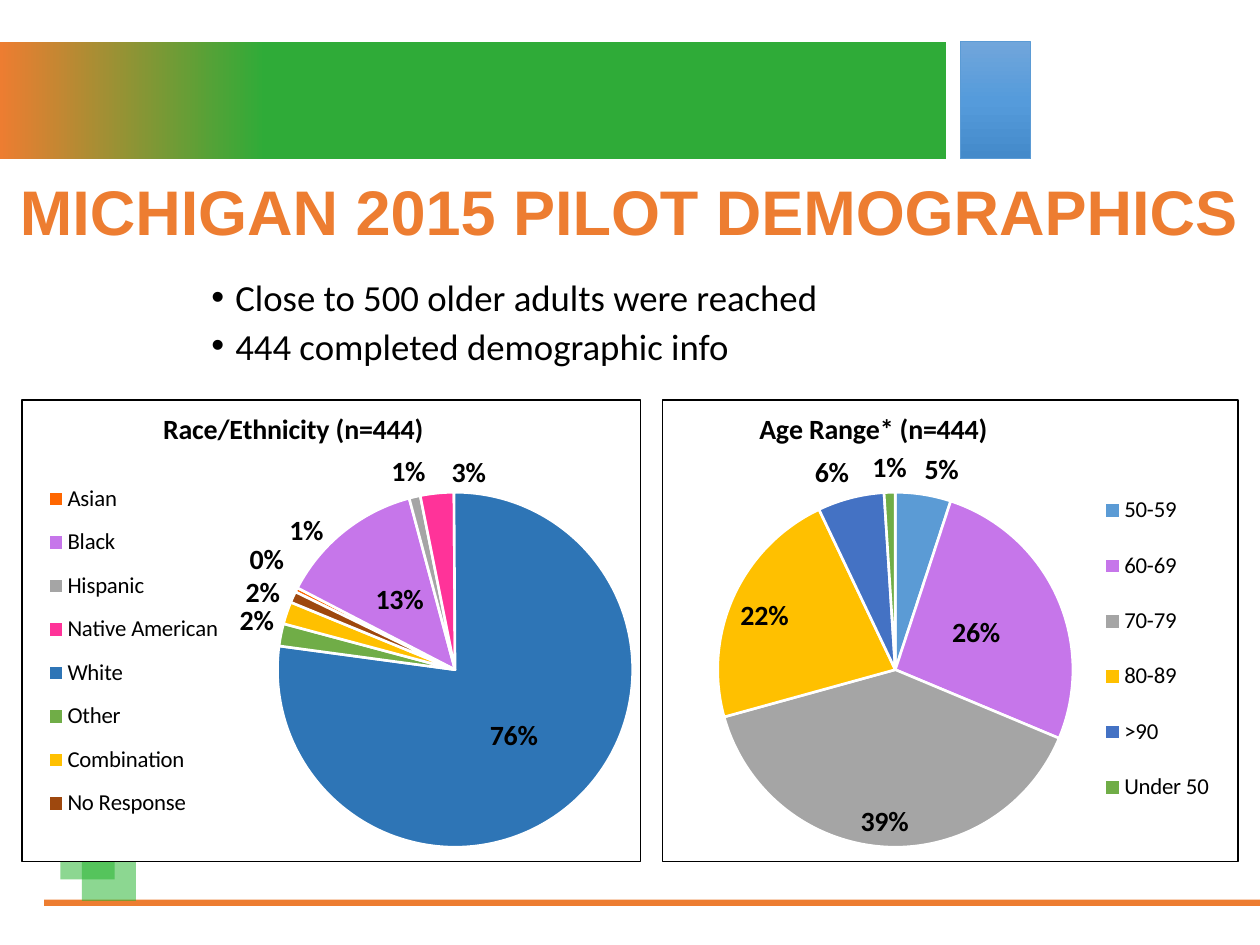
"""Build the Michigan 2015 pilot demographics slide."""
from lxml.etree import SubElement
from pptx import Presentation
from pptx.chart.data import CategoryChartData
from pptx.dml.color import RGBColor
from pptx.enum.chart import XL_CHART_TYPE, XL_LABEL_POSITION, XL_LEGEND_POSITION
from pptx.enum.shapes import MSO_SHAPE
from pptx.enum.text import MSO_ANCHOR
from pptx.oxml import parse_xml
from pptx.oxml.ns import nsdecls, qn
from pptx.util import Inches, Pt

HUES = {
    "orange": "ED7D31", "green": "2FAB38", "leaf": "23B32D", "blue": "5B9BD5",
    "black": "000000", "white": "FFFFFF", "vivid": "FF6600", "violet": "C676EA",
    "gray": "A5A5A5", "pink": "FF3399", "navy": "2E75B6", "grass": "70AD47",
    "gold": "FFC000", "brown": "9E480E", "royal": "4472C4",
    "sky": "71A6DB", "mid": "559BDB", "deep": "448ACA",
}
TITLE = "MICHIGAN 2015 PILOT DEMOGRAPHICS"
POINTS = ["Close to 500 older adults were reached", "444 completed demographic info"]
PLAIN = [
    ((0.35, 7.14, 9.66, 0.05), "orange", 100),
    ((0.48, 6.58, 0.43, 0.4), "leaf", 52),
    ((0.65, 6.75, 0.43, 0.4), "leaf", 52),
]
BLENDS = [
    ((0, 0.33, 7.51, 0.93), [(0, "orange"), (28, "green"), (100, "green")], 0, None),
    ((7.62, 0.33, 0.56, 0.93), [(0, "sky"), (50, "mid"), (100, "deep")], 270, "blue"),
]
SPOTS = {
    "in": XL_LABEL_POSITION.INSIDE_END,
    "mid": XL_LABEL_POSITION.CENTER,
    "out": XL_LABEL_POSITION.OUTSIDE_END,
}
PIES = [
    {
        "title": "Race/Ethnicity (n=444)", "box": (0.17, 3.17, 4.92, 3.67), "start": 296,
        "side": XL_LEGEND_POSITION.LEFT, "head": (0.22, 0.01),
        "key": (0.03, 0.15, 0.3, 0.79), "plot": (0.41, 0.2, 0.6, 0.77),
        "rows": [
            ("Asian", 0.4, "vivid", "out"), ("Black", 13, "violet", "mid"),
            ("Hispanic", 1, "gray", "out"), ("Native American", 3, "pink", "out"),
            ("White", 76, "navy", "mid"), ("Other", 2, "grass", "out"),
            ("Combination", 2, "gold", "out"), ("No Response", 1, "brown", "out"),
        ],
        "shifts": {0: (-0.01, -0.02), 2: (0.02, 0), 3: (0.08, 0.01), 5: (0, 0.01), 7: (0.06, -0.1)},
    },
    {
        "title": "Age Range* (n=444)", "box": (5.25, 3.17, 4.58, 3.67), "start": 0,
        "side": XL_LEGEND_POSITION.RIGHT, "head": (0.16, 0.01),
        "key": (0.75, 0.15, 0.22, 0.78), "plot": (0.08, 0.2, 0.65, 0.77),
        "rows": [
            ("50-59", 5, "blue", "out"), ("60-69", 26, "violet", "mid"),
            ("70-79", 39, "gray", "in"), ("80-89", 22, "gold", "in"),
            (">90", 6, "royal", "out"), ("Under 50", 1, "grass", "out"),
        ],
        "shifts": {},
    },
]


def hue(name):
    return RGBColor.from_string(HUES[name])


def style(font, size, name="black", bold=False, face="Calibri"):
    font.size, font.bold, font.name = Pt(size), bold, face
    font.color.rgb = hue(name)


def add_rect(slide, box):
    rect = slide.shapes.add_shape(MSO_SHAPE.RECTANGLE, *map(Inches, box))
    rect.shadow.inherit = False
    rect.line.fill.background()
    return rect


def add_plain(slide, box, name, alpha):
    rect = add_rect(slide, box)
    rect.fill.solid()
    rect.fill.fore_color.rgb = hue(name)
    if alpha < 100:
        color = rect._element.xpath("./p:spPr/a:solidFill/a:srgbClr")[0]
        SubElement(color, qn("a:alpha"), val=str(alpha * 1000))


def add_blend(slide, box, stops, angle, edge):
    rect = add_rect(slide, box)
    rect.fill.gradient()
    rect.fill.gradient_angle = angle
    ramp = rect._element.xpath(".//a:gsLst")[0]
    for old in list(ramp):
        ramp.remove(old)
    for spot, name in stops:
        stop = SubElement(ramp, qn("a:gs"), pos=str(spot * 1000))
        SubElement(stop, qn("a:srgbClr"), val=HUES[name])
    if edge:
        rect.line.color.rgb = hue(edge)
        rect.line.width = Pt(0.5)


def add_text(slide, box):
    frame = slide.shapes.add_textbox(*map(Inches, box)).text_frame
    frame.word_wrap = True
    return frame


def add_title(slide):
    frame = add_text(slide, (0.06, 1.25, 9.91, 0.91))
    frame.vertical_anchor = MSO_ANCHOR.MIDDLE
    para = frame.paragraphs[0]
    para.text, para.line_spacing = TITLE, 0.9
    style(para.font, 36, "orange", True, "Arial")


def add_points(slide):
    frame = add_text(slide, (1.58, 2.2, 6.47, 0.78))
    for i, text in enumerate(POINTS):
        para = frame.add_paragraph() if i else frame.paragraphs[0]
        para.text, para.line_spacing = text, 0.8
        para.space_before = Pt(7.5 if i else 0)
        props = para._p.get_or_add_pPr()
        props.set("marL", str(Inches(0.19)))
        props.set("indent", str(-Inches(0.19)))
        SubElement(props, qn("a:buFont"), typeface="Arial")
        SubElement(props, qn("a:buChar"), char="•")
        style(para.font, 21)


def place(part, index, box, edge=True, inner=False):
    for old in part.findall(qn("c:layout")):
        part.remove(old)
    layout = parse_xml(f"<c:layout {nsdecls('c')}><c:manualLayout/></c:layout>")
    tags = [("layoutTarget", "inner")] if inner else []
    if edge:
        tags += [("xMode", "edge"), ("yMode", "edge")]
    tags += zip("xywh", box)
    for tag, val in tags:
        SubElement(layout[0], qn(f"c:{tag}"), val=str(val))
    part.insert(index, layout)


def add_pie(slide, pie):
    names, vals, _, _ = zip(*pie["rows"])
    data = CategoryChartData(number_format='0"%"')
    data.categories = names
    data.add_series("Series 1", vals)
    chart = slide.shapes.add_chart(XL_CHART_TYPE.PIE, *map(Inches, pie["box"]), data).chart
    root = chart._chartSpace
    style(chart.font, 10)
    chart.has_title = True
    head = chart.chart_title.text_frame.paragraphs[0]
    head.text = pie["title"]
    style(head.font, 16, bold=True)
    chart.has_legend = True
    chart.legend.position = pie["side"]
    chart.legend.include_in_layout = False
    style(chart.legend.font, 13)

    plot = chart.plots[0]
    plot.vary_by_categories = True
    for i, (_, _, name, spot) in enumerate(pie["rows"]):
        point = plot.series[0].points[i]
        point.format.fill.solid()
        point.format.fill.fore_color.rgb = hue(name)
        point.format.line.color.rgb = hue("white")
        point.format.line.width = Pt(1.5)
        label = point.data_label
        style(label.font, 16, bold=True)
        label.position = SPOTS[spot]
        if i in pie["shifts"]:
            tag = root.xpath(f".//c:dLbl[c:idx/@val='{i}']")[0]
            place(tag, 1, pie["shifts"][i], edge=False)
    for lead in root.xpath(".//c:showLeaderLines"):
        lead.set("val", "0")

    ring = root.xpath(".//c:pieChart")[0]
    for old in ring.findall(qn("c:firstSliceAng")):
        ring.remove(old)
    SubElement(ring, qn("c:firstSliceAng"), val=str(pie["start"]))
    place(root.xpath(".//c:title")[0], 1, pie["head"])
    place(root.xpath(".//c:legend")[0], 1, pie["key"])
    place(root.xpath(".//c:plotArea")[0], 0, pie["plot"], inner=True)
    root.find(qn("c:chart")).addnext(parse_xml(
        f"<c:spPr {nsdecls('c', 'a')}><a:solidFill><a:srgbClr val='{HUES['white']}'/></a:solidFill>"
        f"<a:ln w='{Pt(0.75)}'><a:solidFill><a:srgbClr val='{HUES['black']}'/></a:solidFill></a:ln></c:spPr>"))


def main():
    deck = Presentation()
    deck.slide_width, deck.slide_height = Inches(10), Inches(7.5)
    slide = deck.slides.add_slide(deck.slide_layouts[6])
    for item in PLAIN:
        add_plain(slide, *item)
    for item in BLENDS:
        add_blend(slide, *item)
    add_title(slide)
    add_points(slide)
    for pie in PIES:
        add_pie(slide, pie)
    deck.save("out.pptx")


if __name__ == "__main__":
    main()
